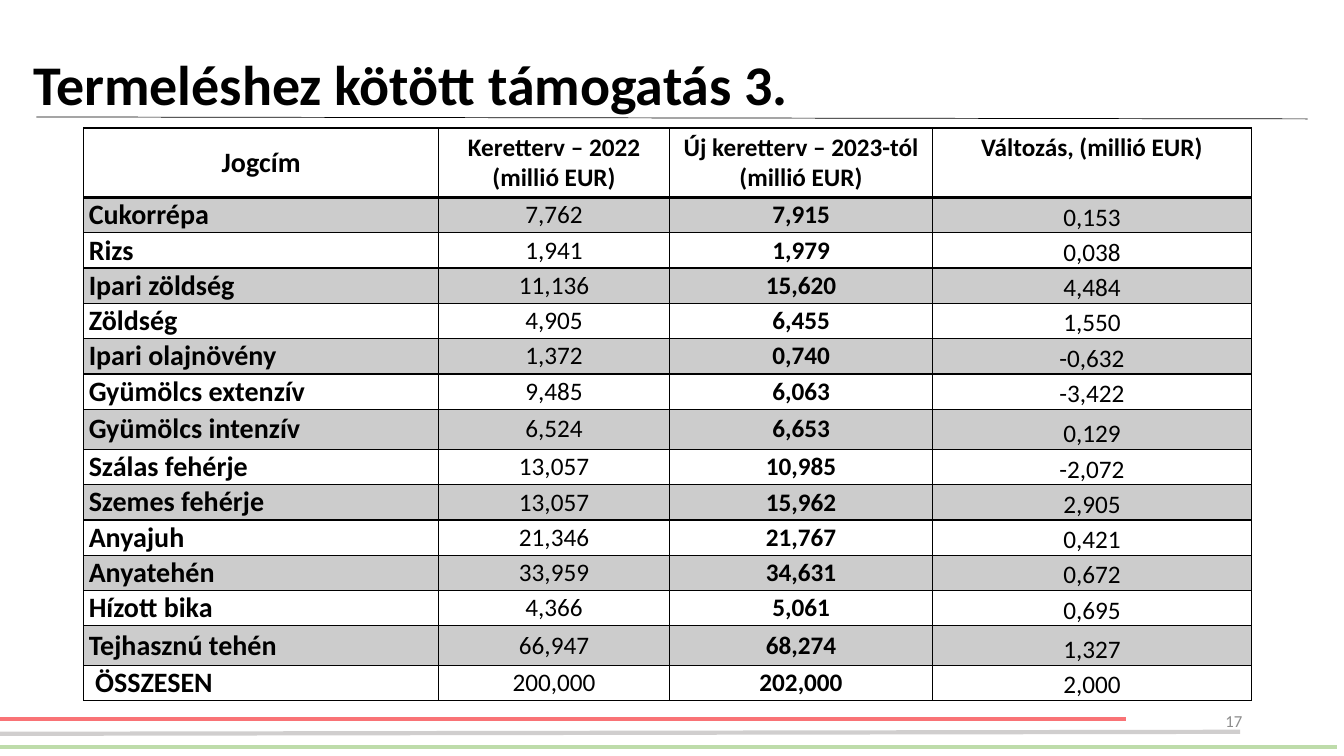
from lxml.etree import SubElement
from pptx import Presentation
from pptx.dml.color import RGBColor
from pptx.enum.shapes import MSO_CONNECTOR
from pptx.enum.text import MSO_ANCHOR as ANCHOR, MSO_AUTO_SIZE, PP_ALIGN as ALIGN
from pptx.oxml.ns import qn
from pptx.util import Inches, Pt

WIDTH, HEIGHT = Inches(13.33), Inches(7.5)
FONT = "Calibri"
COLORS = {"ink": "000000", "paper": "FFFFFF", "number": "8C8C8C",
          "red": "F97376", "green": "BEDCAA", "gray": "D0CECE"}

# Lines: start x, y, end x, y in percent of the slide, colour, points
LINES = [
    (0, 95.07, 83.8, 95.07, "red", 3),
    (0, 98.8, 99.47, 98.8, "green", 3),
    (0, 97.07, 92.27, 96.8, "gray", 3),
    (2.7, 15.47, 97.3, 15.73, "ink", 0.5),
]

COLUMNS = [26.41, 17.18, 19.58, 23.71]
HEADER_HEIGHT, ROW_HEIGHT = 9.2, 4.67
TALL_ROWS = {"Gyümölcs intenzív": 5.33, "Tejhasznú tehén": 5.2}
HEADERS = ["Jogcím", "Keretterv – 2022\n(millió EUR)",
           "Új keretterv – 2023-tól (millió EUR)", "Változás, (millió EUR)"]
SUPPORTS = [
    ("Cukorrépa", "7,762", "7,915", "0,153"),
    ("Rizs", "1,941", "1,979", "0,038"),
    ("Ipari zöldség", "11,136", "15,620", "4,484"),
    ("Zöldség", "4,905", "6,455", "1,550"),
    ("Ipari olajnövény", "1,372", "0,740", "-0,632"),
    ("Gyümölcs extenzív", "9,485", "6,063", "-3,422"),
    ("Gyümölcs intenzív", "6,524", "6,653", "0,129"),
    ("Szálas fehérje", "13,057", "10,985", "-2,072"),
    ("Szemes fehérje", "13,057", "15,962", "2,905"),
    ("Anyajuh", "21,346", "21,767", "0,421"),
    ("Anyatehén", "33,959", "34,631", "0,672"),
    ("Hízott bika", "4,366", "5,061", "0,695"),
    ("Tejhasznú tehén", "66,947", "68,274", "1,327"),
    (" ÖSSZESEN", "200,000", "202,000", "2,000"),
]


def across(percent):
    return round(WIDTH * percent / 100)


def down(percent):
    return round(HEIGHT * percent / 100)


def rgb(name):
    return RGBColor.from_string(COLORS[name])


def write(tf, text, size=18, bold=False, color="ink", align=ALIGN.LEFT, spacing=None):
    """Fill a text frame, one paragraph per line of text."""
    for i, line in enumerate(text.split("\n")):
        p = tf.paragraphs[0] if i == 0 else tf.add_paragraph()
        p.alignment = align
        p.line_spacing = spacing
        r = p.add_run()
        r.text = line
        r.font.name, r.font.size, r.font.bold = FONT, Pt(size), bold
        r.font.color.rgb = rgb(color)


def place(sp, left, top, width, height):
    sp.left, sp.top = across(left), down(top)
    sp.width, sp.height = across(width), down(height)


def add_line(s, x1, y1, x2, y2, color, points):
    line = s.shapes.add_connector(MSO_CONNECTOR.STRAIGHT, across(x1), down(y1),
                                  across(x2), down(y2))
    line.line.color.rgb = rgb(color)
    line.line.width = Pt(points)
    SubElement(line._element.spPr, qn("a:effectLst"))


def add_title(s, text):
    title = s.shapes.title
    place(title, 1.73, 1.87, 86.27, 19.33)
    tf = title.text_frame
    tf.word_wrap = True
    tf.auto_size = MSO_AUTO_SIZE.NONE
    tf.vertical_anchor = ANCHOR.MIDDLE
    write(tf, text, size=40, bold=True, spacing=0.9)


def add_page_number(s, text):
    box = s.shapes.add_textbox(0, 0, 0, 0)
    place(box, 70.67, 92.67, 22.5, 5.33)
    tf = box.text_frame
    tf.word_wrap = True
    tf.vertical_anchor = ANCHOR.MIDDLE
    write(tf, text, size=12, color="number", align=ALIGN.RIGHT)


def set_borders(cell, **points):
    tcPr = cell._tc.get_or_add_tcPr()
    for side in "LRTB":
        ln = SubElement(tcPr, qn(f"a:ln{side}"), w=str(Pt(points.get(side, 1))))
        fill = SubElement(ln, qn("a:solidFill"))
        SubElement(fill, qn("a:srgbClr"), val=COLORS["ink"])


def set_fill(cell, shaded):
    """Shade with 20% ink, or else fill with paper."""
    cell.fill.solid()
    cell.fill.fore_color.rgb = rgb("ink" if shaded else "paper")
    if shaded:
        clr = cell._tc.tcPr.find(qn("a:solidFill")).find(qn("a:srgbClr"))
        SubElement(clr, qn("a:alpha"), val="20000")


def format_cell(cell, row, col):
    header, change = row == 0, col == len(COLUMNS) - 1
    side = 0 if change and not header else 0.05
    cell.margin_left = cell.margin_right = Inches(side)
    cell.margin_top = cell.margin_bottom = 0
    cell.vertical_anchor = ANCHOR.MIDDLE
    if change:
        cell.vertical_anchor = ANCHOR.TOP if header else ANCHOR.BOTTOM
        cell.margin_top = Inches(0.04 if header else 0)
    set_borders(cell, T=2 if row == 1 else 1, B=2 if header else 1)
    set_fill(cell, shaded=row % 2 == 1)


def add_support_table(s):
    heights = [HEADER_HEIGHT] + [TALL_ROWS.get(r[0], ROW_HEIGHT) for r in SUPPORTS]
    frame = s.shapes.add_table(len(heights), len(COLUMNS), across(6.23), down(16.93),
                               across(sum(COLUMNS)), down(sum(heights)))
    table = frame.table
    table.first_row = table.horz_banding = False
    for column, width in zip(table.columns, COLUMNS):
        column.width = across(width)
    for row, height in zip(table.rows, heights):
        row.height = down(height)
    for i, texts in enumerate([HEADERS, *SUPPORTS]):
        for j, text in enumerate(texts):
            cell = table.cell(i, j)
            format_cell(cell, i, j)
            write(cell.text_frame, text, size=20 if j == 0 else 18,
                  bold=i == 0 or j in (0, 2),
                  align=ALIGN.LEFT if i and j == 0 else ALIGN.CENTER)


def main():
    prs = Presentation()
    prs.slide_width, prs.slide_height = WIDTH, HEIGHT
    s = prs.slides.add_slide(prs.slide_layouts[5])
    for line in LINES:
        add_line(s, *line)
    add_title(s, "Termeléshez kötött támogatás 3.")
    add_page_number(s, "17")
    add_support_table(s)
    prs.save("out.pptx")


if __name__ == "__main__":
    main()
